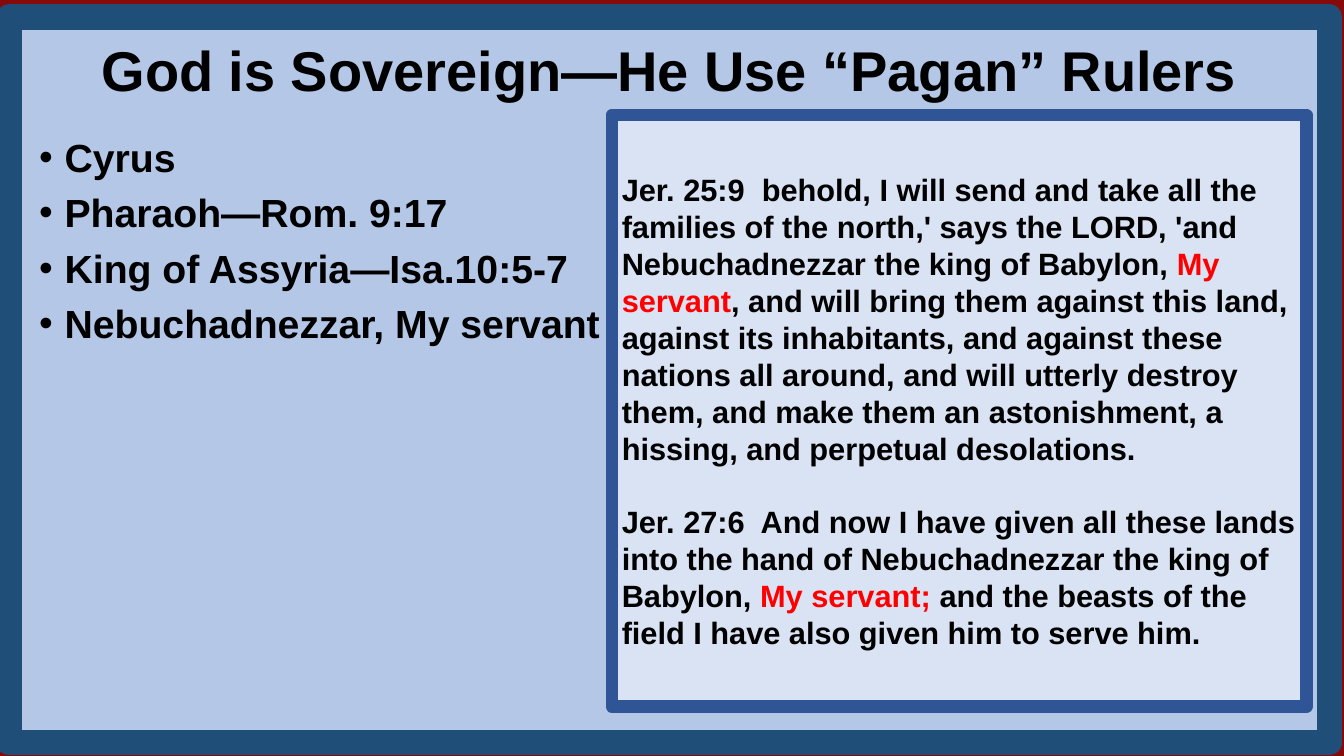
from dataclasses import dataclass

from lxml.etree import SubElement
from pptx import Presentation
from pptx.dml.color import RGBColor
from pptx.enum.shapes import MSO_SHAPE
from pptx.enum.text import MSO_ANCHOR, MSO_AUTO_SIZE, PP_ALIGN
from pptx.oxml.ns import qn
from pptx.util import Cm, Pt


@dataclass(frozen=True)
class Theme:
    font: str = "Arial"
    background: RGBColor = RGBColor(0x86, 0x0A, 0x0A)
    frame_fill: RGBColor = RGBColor(0xB4, 0xC7, 0xE7)
    frame_line: RGBColor = RGBColor(0x1F, 0x4E, 0x79)
    panel_fill: RGBColor = RGBColor(0xDA, 0xE3, 0xF3)
    panel_line: RGBColor = RGBColor(0x2F, 0x55, 0x97)
    text: RGBColor = RGBColor(0, 0, 0)
    highlight: RGBColor = RGBColor(0xFF, 0, 0)
    title_size: Pt = Pt(40)
    bullet_size: Pt = Pt(28)
    verse_size: Pt = Pt(22)


theme = Theme()


def add_panel(position, fill, line, width):
    panel = slide.shapes.add_shape(MSO_SHAPE.RECTANGLE, *map(Cm, position))
    panel.shadow.inherit = False
    panel.fill.solid()
    panel.fill.fore_color.rgb = fill
    panel.line.color.rgb = line
    panel.line.width = Pt(width)
    return panel


def add_run(paragraph, text, size, color=theme.text):
    run = paragraph.add_run()
    run.text = text
    formats = {"name": theme.font, "size": size, "bold": True}
    for name, value in formats.items():
        setattr(run.font, name, value)
    run.font.color.rgb = color


presentation = Presentation()
presentation.slide_width, presentation.slide_height = Cm(33.87), Cm(19.05)
slide = presentation.slides.add_slide(presentation.slide_layouts[5])
slide.background.fill.solid()
slide.background.fill.fore_color.rgb = theme.background

add_panel((0.23, 0.43, 33.27, 18.29), theme.frame_fill, theme.frame_line, 18)
verse_panel = add_panel((15.42, 2.9, 17.5, 14.91), theme.panel_fill, theme.panel_line, 9)

# Verses, each split around its highlighted words
verses = [
    (
        "Jer. 25:9  behold, I will send and take all the families of the north,' "
        "says the LORD, 'and Nebuchadnezzar the king of Babylon, ",
        "My servant",
        ", and will bring them against this land, against its inhabitants, and "
        "against these nations all around, and will utterly destroy them, and make "
        "them an astonishment, a hissing, and perpetual desolations.",
    ),
    (
        "Jer. 27:6  And now I have given all these lands into the hand of "
        "Nebuchadnezzar the king of Babylon, ",
        "My servant; ",
        "and the beasts of the field I have also given him to serve him.",
    ),
]
verse_frame = verse_panel.text_frame
verse_frame.word_wrap = True
verse_frame.vertical_anchor = MSO_ANCHOR.MIDDLE
for index, verse in enumerate(verses):
    paragraph = verse_frame.paragraphs[0] if index == 0 else verse_frame.add_paragraph()
    paragraph.alignment = PP_ALIGN.LEFT
    if index:
        paragraph.space_before = Pt(26)
    for text, color in zip(verse, (theme.text, theme.highlight, theme.text)):
        add_run(paragraph, text, theme.verse_size, color)

# Bulleted rulers
rulers = ["Cyrus", "Pharaoh—Rom. 9:17", "King of Assyria—Isa.10:5-7", "Nebuchadnezzar, My servant"]
ruler_box = slide.shapes.add_textbox(Cm(0.74), Cm(3.23), Cm(15.44), Cm(5.69))
ruler_frame = ruler_box.text_frame
ruler_frame.word_wrap = True
ruler_frame.auto_size = MSO_AUTO_SIZE.SHAPE_TO_FIT_TEXT
for index, ruler in enumerate(rulers):
    paragraph = ruler_frame.paragraphs[0] if index == 0 else ruler_frame.add_paragraph()
    paragraph.space_after = Pt(6)
    properties = paragraph._p.get_or_add_pPr()
    indent = Cm(0.64)
    properties.set("marL", str(indent))
    properties.set("indent", str(-indent))
    bullet_color = SubElement(properties, qn("a:buClr"))
    SubElement(bullet_color, qn("a:srgbClr"), val=str(theme.text))
    SubElement(properties, qn("a:buFont"), typeface=theme.font)
    SubElement(properties, qn("a:buChar"), char="•")
    add_run(paragraph, ruler, theme.bullet_size)

# Title, brought in front of the frame
title = slide.shapes.title
title.element.getparent().append(title.element)
title_position = {"left": 0.66, "top": 0.76, "width": 32.39, "height": 1.96}
for name, value in title_position.items():
    setattr(title, name, Cm(value))
title_frame = title.text_frame
title_frame.word_wrap = True
title_frame.auto_size = MSO_AUTO_SIZE.NONE
title_frame.vertical_anchor = MSO_ANCHOR.TOP
title_paragraph = title_frame.paragraphs[0]
title_paragraph.alignment = PP_ALIGN.CENTER
add_run(title_paragraph, "God is Sovereign—He Use “Pagan” Rulers", theme.title_size)

presentation.save("out.pptx")
